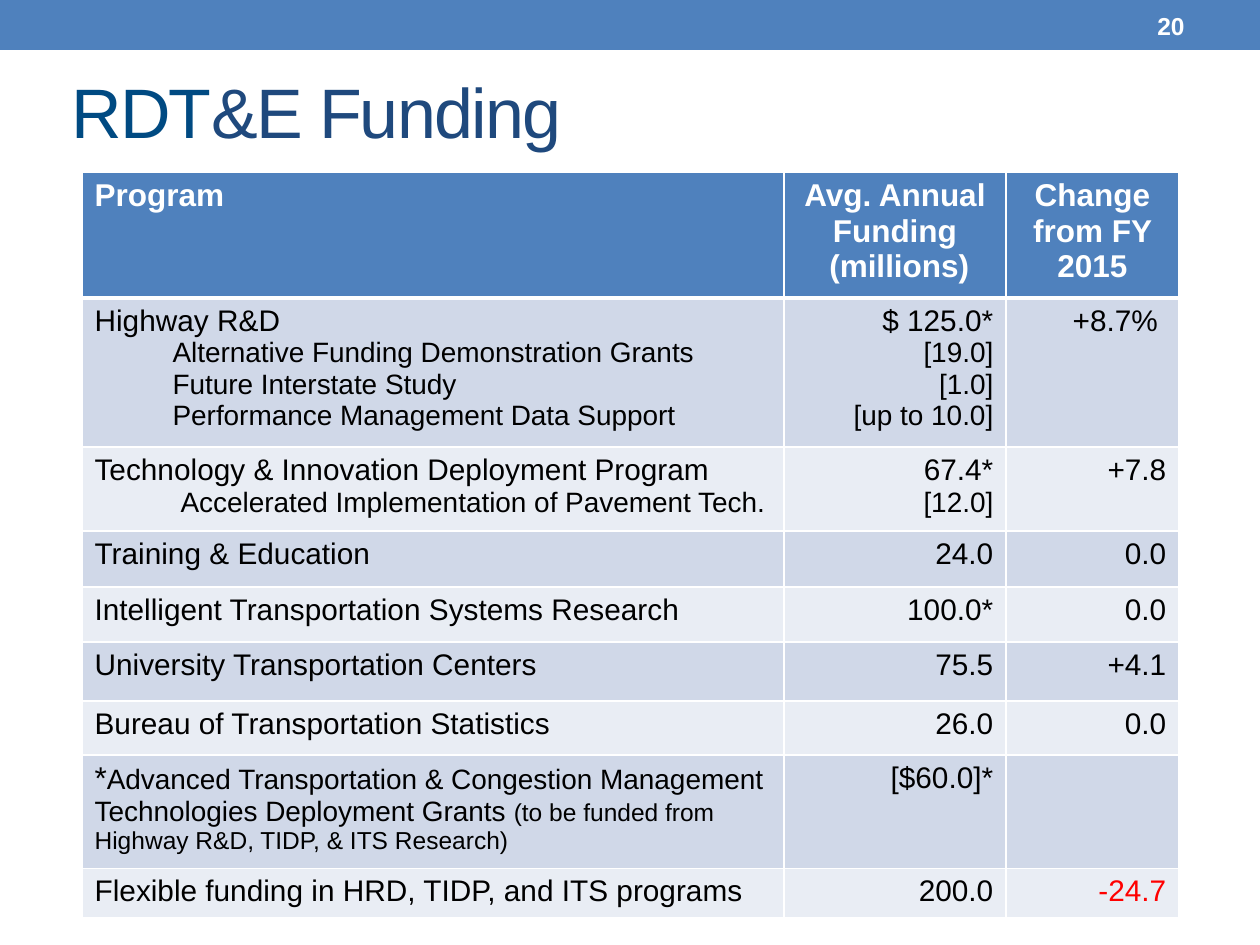
from dataclasses import dataclass

from lxml import etree
from pptx import Presentation, util as u
from pptx.dml.color import RGBColor
from pptx.enum import shapes, text
from pptx.oxml.ns import qn

PX_PER_INCH = 126
FONT = "Arial"
COLORS = {
    "blue": "4F81BD", "navy": "1F497D", "teal": "004A82", "white": "FFFFFF",
    "black": "000000", "red": "FF0000", "odd": "D0D8E8", "even": "E9EDF4",
}
LEFT, CENTER, RIGHT = text.PP_ALIGN.LEFT, text.PP_ALIGN.CENTER, text.PP_ALIGN.RIGHT
SUB_INDENT = 78


@dataclass(frozen=True)
class Run:
    text: str
    size: int = 17
    color: str = "black"
    bold: bool = False
    spacing: int = 0  # hundredths of a point


@dataclass(frozen=True)
class Para:
    runs: list[Run]
    align: text.PP_ALIGN = LEFT
    indent: int = 0


@dataclass(frozen=True)
class Row:
    height: int
    cells: list[list[Para]]


def px(n: int) -> u.Emu:
    return u.Emu(round(n * 914400 / PX_PER_INCH))


def rgb(name: str) -> RGBColor:
    return RGBColor.from_string(COLORS[name])


def line(words: str, align: text.PP_ALIGN = LEFT, indent: int = 0, **style) -> Para:
    return Para([Run(words, **style)], align, indent)


def head(words: str, align: text.PP_ALIGN = CENTER) -> Para:
    return line(words, align, size=18, color="white", bold=True)


def program(name: str, *subs: str, indent: int = SUB_INDENT) -> list[Para]:
    return [line(name)] + [line(sub, indent=indent, size=16) for sub in subs]


def amount(value: str, *subs: str, color: str = "black") -> list[Para]:
    return [line(value, RIGHT, color=color)] + [line(sub, RIGHT, size=16) for sub in subs]


def write(tf, paras: list[Para]) -> None:
    for i, para in enumerate(paras):
        p = tf.paragraphs[0] if i == 0 else tf.add_paragraph()
        p.alignment = para.align
        if para.indent:
            pPr = p._p.get_or_add_pPr()
            pPr.set("marL", str(px(para.indent)))
            pPr.set("indent", "0")
        for run in para.runs:
            r = p.add_run()
            r.text = run.text
            r.font.name = FONT
            r.font.size = u.Pt(run.size)
            r.font.bold = run.bold
            r.font.color.rgb = rgb(run.color)
            if run.spacing:
                r._r.get_or_add_rPr().set("spc", str(run.spacing))


def add_text(s, x: int, y: int, w: int, h: int, para: Para) -> None:
    tf = s.shapes.add_textbox(px(x), px(y), px(w), px(h)).text_frame
    tf.word_wrap = True
    tf.vertical_anchor = text.MSO_ANCHOR.MIDDLE
    write(tf, [para])


def set_borders(cell, top: int, bottom: int) -> None:
    tcPr = cell._tc.get_or_add_tcPr()
    widths = {"a:lnL": 1, "a:lnR": 1, "a:lnT": top, "a:lnB": bottom}
    for tag, width in widths.items():
        ln = etree.SubElement(tcPr, qn(tag), w=str(u.Pt(width)))
        fill = etree.SubElement(ln, qn("a:solidFill"))
        etree.SubElement(fill, qn("a:srgbClr"), val=COLORS["white"])


def add_funding_table(s, x: int, y: int, widths: list[int], rows: list[Row]) -> None:
    frame = s.shapes.add_table(len(rows), len(widths), px(x), px(y),
                               px(sum(widths)), px(sum(row.height for row in rows)))
    table = frame.table
    for column, width in zip(table.columns, widths):
        column.width = px(width)
    for i, row in enumerate(rows):
        table.rows[i].height = px(row.height)
        fill = "blue" if i == 0 else ("odd" if i % 2 else "even")
        for j, paras in enumerate(row.cells):
            cell = table.cell(i, j)
            set_borders(cell, top=3 if i == 1 else 1, bottom=3 if i == 0 else 1)
            cell.fill.solid()
            cell.fill.fore_color.rgb = rgb(fill)
            write(cell.text_frame, paras)


ROWS = [
    Row(121, [[head("Program", LEFT)],
              [head("Avg. Annual Funding"), head(" (millions)")],
              [head("Change from FY 2015")]]),
    Row(139, [program("Highway R&D", "Alternative Funding Demonstration Grants",
                      "Future Interstate Study", "Performance Management Data Support"),
              amount("$ 125.0*", "[19.0]", "[1.0]", "[up to 10.0]"),
              amount("+8.7% ")]),
    Row(84, [program("Technology & Innovation Deployment Program",
                     "Accelerated Implementation of Pavement Tech.", indent=86),
             amount("67.4*", "[12.0]"), amount("+7.8")]),
    Row(56, [program("Training & Education"), amount("24.0"), amount("0.0")]),
    Row(55, [program("Intelligent Transportation Systems Research"),
             amount("100.0*"), amount("0.0")]),
    Row(59, [program("University Transportation Centers"), amount("75.5"), amount("+4.1")]),
    Row(54, [program("Bureau of Transportation Statistics"), amount("26.0"), amount("0.0")]),
    Row(113, [[Para([Run("*", 18),
                     Run("Advanced Transportation & Congestion Management "
                         "Technologies Deployment Grants ", 16),
                     Run("(to be funded from Highway R&D, TIDP, & ITS Research)", 14)])],
              amount("[$60.0]*"), []]),
    Row(49, [program("Flexible funding in HRD, TIDP, and ITS programs"),
             amount("200.0"), amount("-24.7", color="red")]),
]


def main() -> None:
    prs = Presentation()
    prs.slide_width, prs.slide_height = px(1260), px(945)
    s = prs.slides.add_slide(prs.slide_layouts[6])

    # Top band and slide number
    sp = s.shapes.add_shape(shapes.MSO_SHAPE.RECTANGLE, 0, 0, px(1260), px(50))
    sp.shadow.inherit = False
    sp.fill.solid()
    sp.fill.fore_color.rgb = rgb("blue")
    sp.line.fill.background()
    add_text(s, 1050, 3, 147, 45, line("20", RIGHT, size=14, color="white", bold=True))

    # Title
    add_text(s, 59, 52, 1136, 117, Para([Run("RDT", 40, "teal", spacing=-100),
                                         Run("&E Funding", 40, "navy", spacing=-100)]))

    # Funding by program
    add_funding_table(s, 82, 172, [702, 222, 173], ROWS)

    prs.save("out.pptx")


if __name__ == "__main__":
    main()
